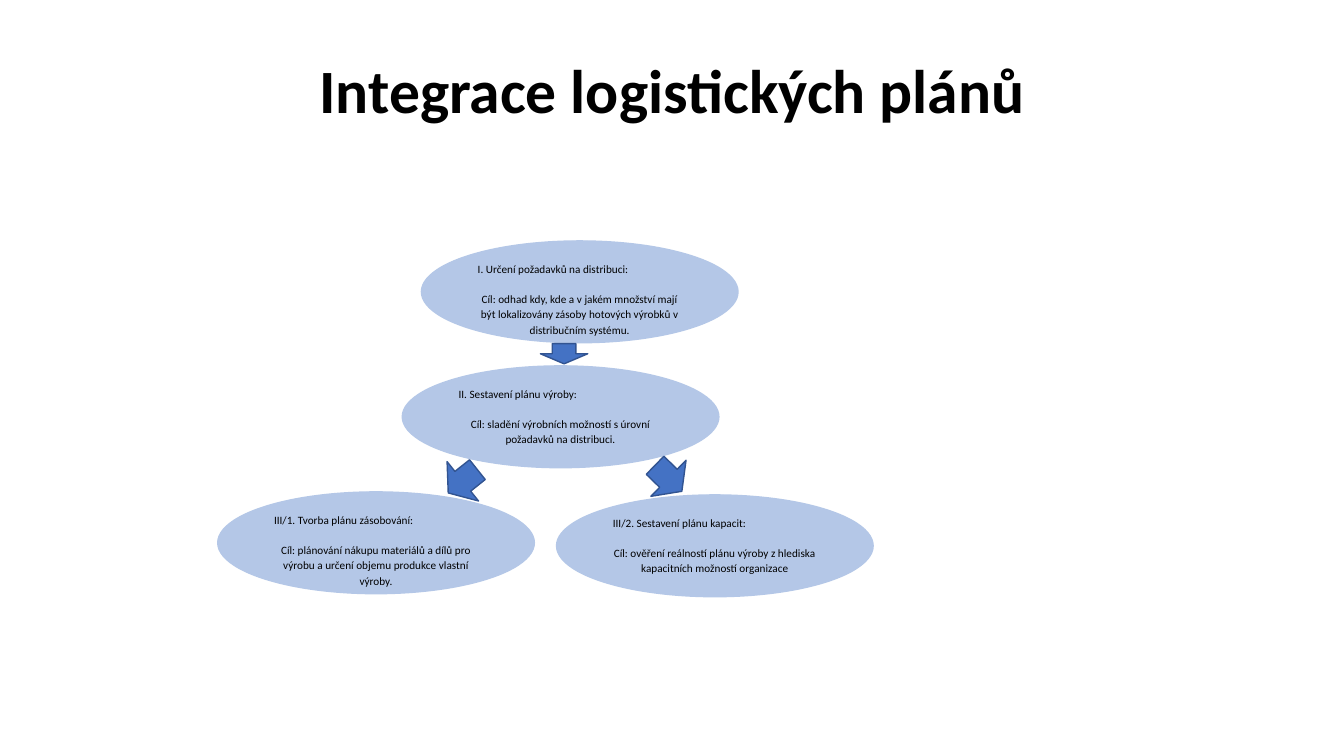
from dataclasses import dataclass

from pptx import Presentation
from pptx import util as u
from pptx.dml.color import RGBColor
from pptx.enum import shapes, text


@dataclass(frozen=True)
class Theme:
    """Colours, font and type sizes of the slide."""
    font: str = "Calibri"
    ink: RGBColor = RGBColor(0x00, 0x00, 0x00)
    stage: RGBColor = RGBColor(0xB4, 0xC7, 0xE7)
    arrow: RGBColor = RGBColor(0x44, 0x72, 0xC4)
    arrow_edge: RGBColor = RGBColor(0x32, 0x54, 0x91)
    title_size: int = 44
    stage_size: int = 8


THEME = Theme()
STAGE_WIDTH, STAGE_HEIGHT = 3.14, 1.01
STAGES = [
    (4.18, 2.39, "I. Určení požadavků na distribuci:",
     "Cíl: odhad kdy, kde a v jakém množství mají být lokalizovány "
     "zásoby hotových výrobků v distribučním systému."),
    (5.52, 4.91, "III/2. Sestavení plánu kapacit:",
     "Cíl: ověření reálností plánu výroby z hlediska "
     "kapacitních možností organizace"),
    (2.16, 4.88, "III/1. Tvorba plánu zásobování:",
     "Cíl: plánování nákupu materiálů a dílů pro výrobu "
     "a určení objemu produkce vlastní výroby."),
    (3.99, 3.63, "II. Sestavení plánu výroby:",
     "Cíl: sladění výrobních možností s úrovní požadavků na distribuci."),
]
ARROWS = [
    (5.36, 3.41, 0.47, 0.2, 0),
    (4.34, 4.59, 0.5, 0.37, 51.4),
    (6.38, 4.56, 0.5, 0.37, 314.2),
]


def style_runs(paragraph, size, bold=False, heading=False):
    """Format every run of a paragraph."""
    for run in paragraph.runs:
        run.font.name = THEME.font
        run.font.size = u.Pt(size)
        run.font.color.rgb = THEME.ink
        run.font.bold = bold or heading
        run.font.italic = run.font.underline = heading


def add_title(slide, wording):
    """Add the centred slide title."""
    title = slide.shapes.add_textbox(
        u.Inches(0.67), u.Inches(0.3), u.Inches(12), u.Inches(1.25))
    frame = title.text_frame
    frame.word_wrap = True
    frame.vertical_anchor = text.MSO_ANCHOR.MIDDLE
    frame.text = wording
    line = frame.paragraphs[0]
    line.alignment = text.PP_ALIGN.CENTER
    line.line_spacing = 0.9
    style_runs(line, THEME.title_size, bold=True)


def add_filled(slide, kind, box, fill, edge):
    """Add a flat preset shape with a one-point outline."""
    shape = slide.shapes.add_shape(kind, *(u.Inches(side) for side in box))
    shape.shadow.inherit = False
    shape.fill.solid()
    shape.fill.fore_color.rgb = fill
    shape.line.color.rgb = edge
    shape.line.width = u.Pt(1)
    return shape


def add_stage(slide, left, top, heading, goal):
    """Add one planning stage with its heading and goal."""
    stage = add_filled(slide, shapes.MSO_SHAPE.OVAL,
                       (left, top, STAGE_WIDTH, STAGE_HEIGHT),
                       THEME.stage, THEME.stage)
    frame = stage.text_frame
    frame.word_wrap = True
    frame.vertical_anchor = text.MSO_ANCHOR.TOP
    frame.text = f"{heading}\n{goal}"
    heading_line, goal_line = frame.paragraphs
    heading_line.alignment = text.PP_ALIGN.LEFT
    goal_line.alignment = text.PP_ALIGN.CENTER
    for line in frame.paragraphs:
        line.line_spacing = 1.15
        line.space_after = u.Pt(10)
        style_runs(line, THEME.stage_size, heading=line is heading_line)


def add_arrow(slide, left, top, width, height, turn):
    """Add a block arrow leading to the next stage."""
    arrow = add_filled(slide, shapes.MSO_SHAPE.DOWN_ARROW,
                       (left, top, width, height),
                       THEME.arrow, THEME.arrow_edge)
    arrow.rotation = turn


def main():
    """Build and save the slide."""
    deck = Presentation()
    deck.slide_width, deck.slide_height = u.Inches(13.33), u.Inches(7.5)
    slide = deck.slides.add_slide(deck.slide_layouts[6])
    add_title(slide, "Integrace logistických plánů")
    for stage in STAGES:
        add_stage(slide, *stage)
    for arrow in ARROWS:
        add_arrow(slide, *arrow)
    deck.save("out.pptx")


if __name__ == "__main__":
    main()
